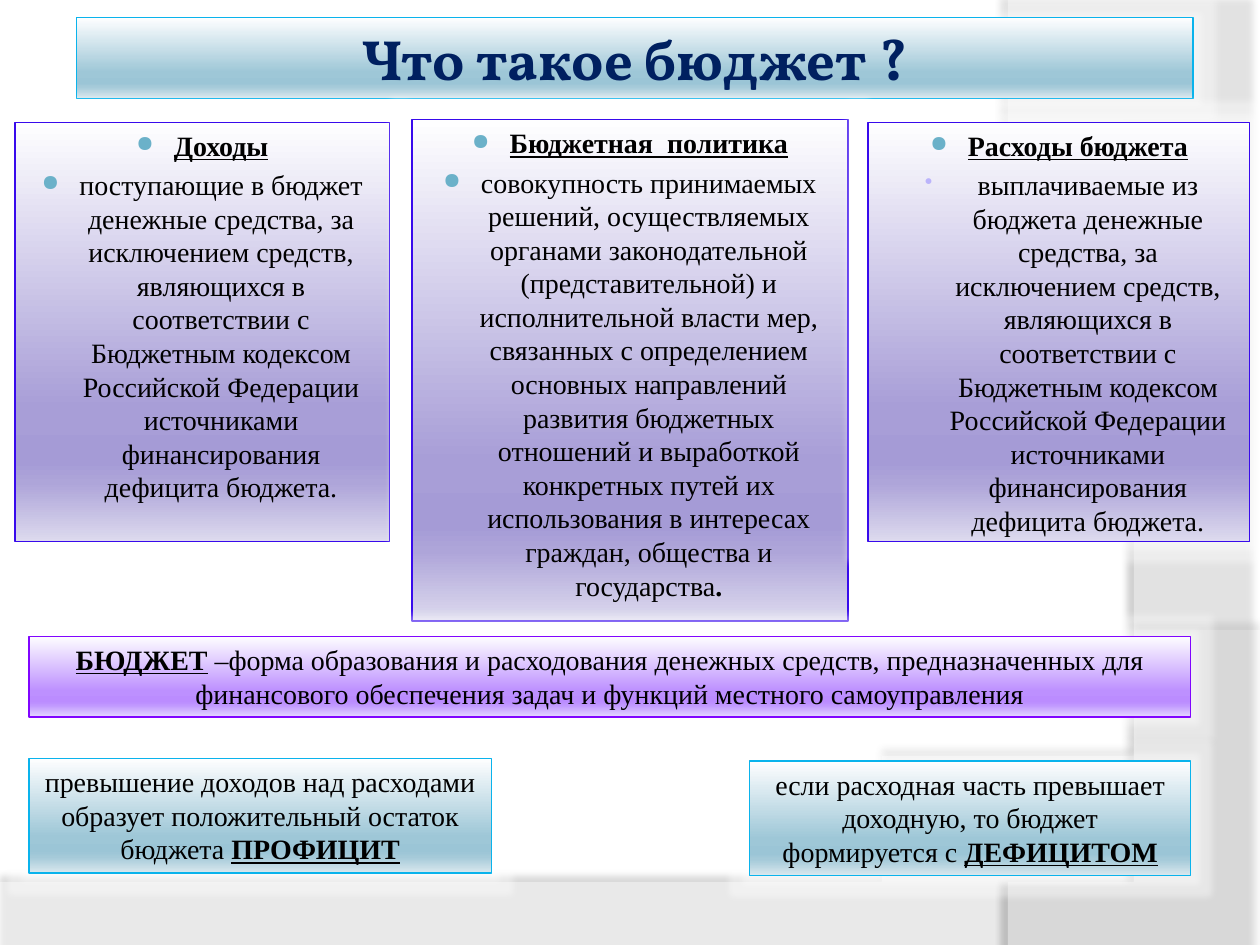
from lxml import etree
from pptx import Presentation
from pptx.dml.color import RGBColor
from pptx.enum.shapes import MSO_SHAPE
from pptx.enum.text import MSO_ANCHOR, PP_ALIGN
from pptx.oxml import parse_xml
from pptx.oxml.ns import nsdecls, qn
from pptx.util import Inches, Pt

BLACK = RGBColor(0, 0, 0)
WHITE = RGBColor(255, 255, 255)
NAVY = RGBColor(0x00, 0x20, 0x60)
STOPS = (0, 68, 81, 86, 100)
# Theme: line colour, gradient colours at STOPS
BLUE = (RGBColor(0x0A, 0xB3, 0xEC), ("FEFEFF", "9EC7D7", "9BC5D6", "A5CAD9", "DAE8EE"))
INDIGO = (RGBColor(0x38, 0x0A, 0xEC), ("FEFEFF", "A89ED7", "A59BD6", "AEA5D9", "DDDAEE"))
VIOLET = (RGBColor(0x81, 0x05, 0xFF), ("FEFEFF", "BD90FF", "BB8CFF", "C199FF", "E4D6FF"))

# Bullet: character, colour, left margin, hanging indent
DISC = ("●", "6BB1C9", 0.3, -0.3)
DOT = ("•", "BBB4FB", 0.46, -0.42)

TITLE = "Что такое бюджет ?"
FLOWS = (
    "денежные средства, за исключением средств, являющихся в соответствии с Бюджетным "
    "кодексом Российской Федерации источниками финансирования дефицита бюджета."
)
POLICY = (
    "совокупность принимаемых решений, осуществляемых органами законодательной "
    "(представительной) и исполнительной власти мер, связанных с определением основных "
    "направлений развития бюджетных отношений и выработкой конкретных путей их "
    "использования в интересах граждан, общества и государства"
)
# Runs are (text, style): "b" bold, "u" underlined
# Box: place, theme, paragraphs of (bullet, runs)
BOXES = [
    ((0.12, 0.97, 2.97, 3.33), INDIGO, [
        (DISC, [("Доходы", "bu")]),
        (DISC, [("поступающие в бюджет " + FLOWS, "")])]),
    ((3.27, 0.95, 3.46, 3.98), INDIGO, [
        (DISC, [("Бюджетная  политика", "bu")]),
        (DISC, [(POLICY, ""), (".", "b")])]),
    ((6.89, 0.97, 3.03, 3.33), INDIGO, [
        (DISC, [("Расходы бюджета", "bu")]),
        (DOT, [("выплачиваемые из бюджета " + FLOWS, "")])]),
    ((0.23, 5.05, 9.22, 0.64), VIOLET, [
        (None, [("БЮДЖЕТ", "bu"),
                (" –форма образования и расходования денежных средств, предназначенных для "
                 "финансового обеспечения задач и функций местного самоуправления", "")])]),
    ((0.23, 6.02, 3.67, 0.91), BLUE, [
        (None, [("превышение доходов над расходами образует положительный остаток бюджета ", ""),
                ("ПРОФИЦИТ", "bu")])]),
    ((5.95, 6.04, 3.5, 0.91), BLUE, [
        (None, [("если расходная часть превышает доходную, то бюджет формируется с ", ""),
                ("ДЕФИЦИТОМ", "bu")])]),
]
# Wave: corners, Bezier curve, opacity, shadow (opacity, blur, distance, angle)
WAVES = [
    ([(0, 7.05), (0, 7.5), (10, 7.5)],
     ((10, 5.2), (5.59, 7.29), (3.91, 7.19), (0, 7.05)), 45, (35, 4, 3.5, 270)),
    ([(10, 0.02), (10, 7.5)],
     ((8.21, 7.5), (9.35, 6.19), (10.18, 3), (8, 0)), 40, (45, 4, 4, 180)),
]


def bezier(points, steps=40):
    for i in range(steps + 1):
        t = i / steps
        weights = ((1 - t) ** 3, 3 * t * (1 - t) ** 2, 3 * t * t * (1 - t), t ** 3)
        yield tuple(sum(w * p[axis] for w, p in zip(weights, points)) for axis in (0, 1))


def add_effect(sp, xml):
    sp.shadow.inherit = False
    sp._element.spPr.find(qn("a:effectLst")).append(parse_xml(xml))


def add_wave(slide, corners, curve, opacity, shadow):
    points = corners + list(bezier(curve))
    builder = slide.shapes.build_freeform(*points[0], scale=Inches(1))
    builder.add_line_segments(points[1:], close=True)
    sp = builder.convert_to_shape()
    sp.fill.solid()
    sp.fill.fore_color.rgb = WHITE
    color = sp._element.spPr.find(qn("a:solidFill"))[0]
    etree.SubElement(color, qn("a:alpha"), val=str(opacity * 1000))
    sp.line.fill.background()
    alpha, blur, dist, angle = shadow
    add_effect(sp, f'<a:outerShdw {nsdecls("a")} blurRad="{Pt(blur)}" dist="{Pt(dist)}" '
                   f'dir="{angle * 60000}" algn="ctr" rotWithShape="0"><a:srgbClr val="000000">'
                   f'<a:alpha val="{alpha * 1000}"/></a:srgbClr></a:outerShdw>')


def add_panel(slide, place, theme):
    sp = slide.shapes.add_shape(MSO_SHAPE.RECTANGLE, *map(Inches, place))
    line, colors = theme
    stops = "".join(f'<a:gs pos="{pos * 1000}"><a:srgbClr val="{c}"/></a:gs>'
                    for pos, c in zip(STOPS, colors))
    sp._element.spPr.find(qn("a:prstGeom")).addnext(parse_xml(
        f'<a:gradFill {nsdecls("a")} rotWithShape="1"><a:gsLst>{stops}</a:gsLst>'
        '<a:lin ang="5400000" scaled="0"/></a:gradFill>'))
    sp.line.color.rgb = line
    sp.line.width = Pt(0.75)
    add_effect(sp, f'<a:glow {nsdecls("a")} rad="{Inches(0.11)}"><a:srgbClr val="FFFFFF">'
                   '<a:alpha val="40000"/></a:srgbClr></a:glow>')
    sp.text_frame.word_wrap = True
    return sp.text_frame


def add_run(p, text, font, size, color, style=""):
    r = p.add_run()
    r.text = text
    r.font.name, r.font.size, r.font.color.rgb = font, Pt(size), color
    r.font.bold, r.font.underline = "b" in style, "u" in style


def add_bullet(p, char, color, margin, indent):
    pPr = p._p.get_or_add_pPr()
    pPr.set("marL", str(Inches(margin)))
    pPr.set("indent", str(Inches(indent)))
    etree.SubElement(etree.SubElement(pPr, qn("a:buClr")), qn("a:srgbClr"), val=color)
    etree.SubElement(pPr, qn("a:buSzPct"), val="80000")
    etree.SubElement(pPr, qn("a:buChar"), char=char)


prs = Presentation()
prs.slide_width, prs.slide_height = Inches(10), Inches(7.5)
slide = prs.slides.add_slide(prs.slide_layouts[6])

# Background waves
for wave in WAVES:
    add_wave(slide, *wave)

# Title
tf = add_panel(slide, (0.61, 0.14, 8.86, 0.64), BLUE)
tf.margin_left = tf.margin_right = Inches(0.05)
tf.vertical_anchor = MSO_ANCHOR.MIDDLE
tf.paragraphs[0].alignment = PP_ALIGN.CENTER
add_run(tf.paragraphs[0], TITLE, "Vollkorn", 32.4, NAVY, "b")

# Definition boxes
for place, theme, paragraphs in BOXES:
    tf = add_panel(slide, place, theme)
    tf.vertical_anchor = MSO_ANCHOR.TOP
    for i, (bullet, runs) in enumerate(paragraphs):
        p = tf.add_paragraph() if i else tf.paragraphs[0]
        p.alignment = PP_ALIGN.CENTER
        if i:
            p.space_before = Pt(3.2)
        if bullet:
            add_bullet(p, *bullet)
        for text, style in runs:
            add_run(p, text, "Times New Roman", 16, BLACK, style)

prs.save("out.pptx")
